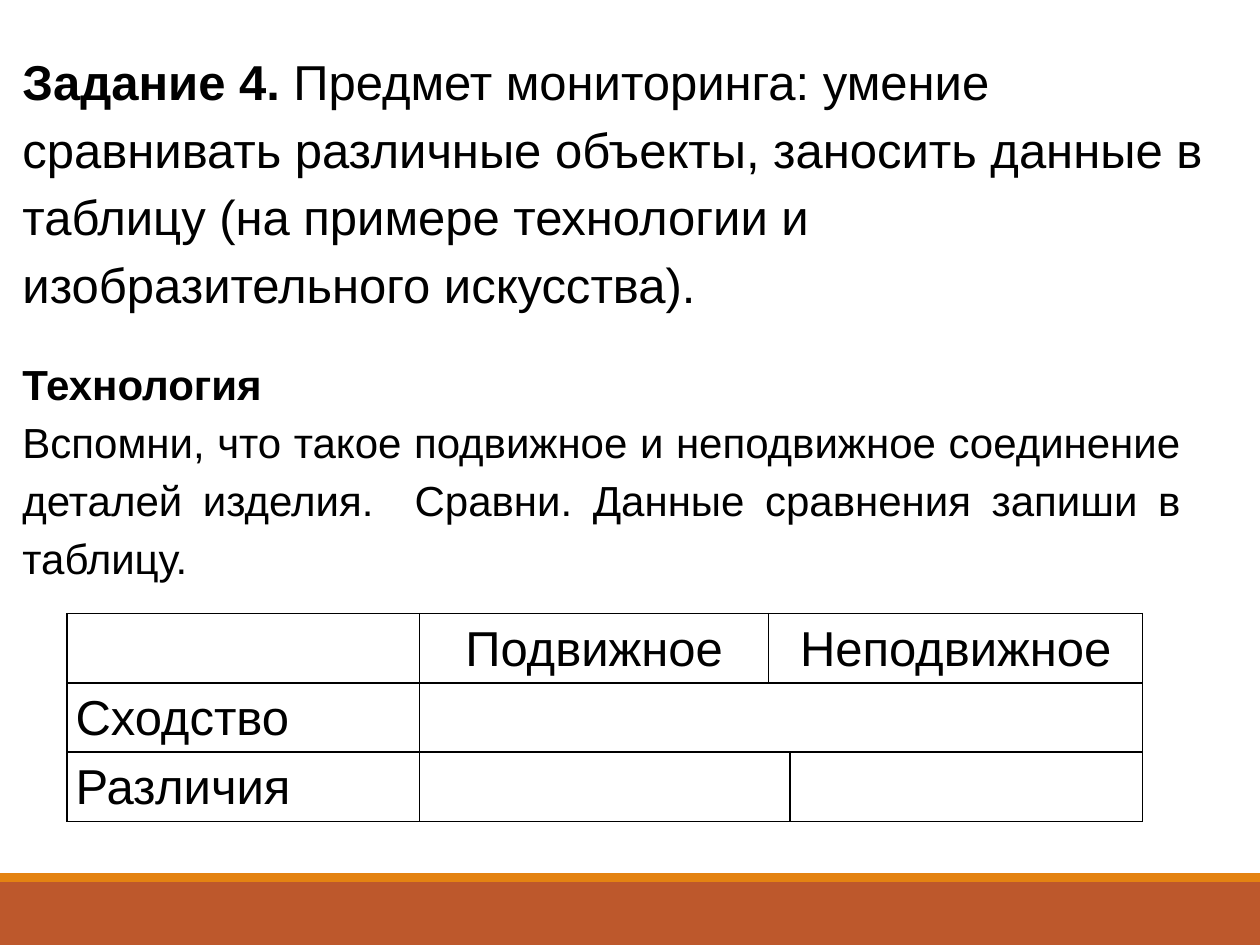
import pptx
import pptx.dml.color
import pptx.enum.shapes
import pptx.enum.text
import pptx.oxml
import pptx.oxml.ns
import pptx.util

WIDTH, HEIGHT = 10, 7.5
INK = "000000"
ALIGN = pptx.enum.text.PP_ALIGN
inches = pptx.util.Inches


def color(hex_value):
    return pptx.dml.color.RGBColor.from_string(hex_value)


def add_band(slide, top, height, fill):
    band = slide.shapes.add_shape(
        pptx.enum.shapes.MSO_SHAPE.RECTANGLE,
        0, inches(top), inches(WIDTH), inches(height))
    band.shadow.inherit = False
    band.fill.solid()
    band.fill.fore_color.rgb = color(fill)
    band.line.fill.background()


def write_paragraph(paragraph, runs, size, align):
    paragraph.alignment = align
    paragraph.line_spacing = 1.15
    for wording, bold in runs:
        run = paragraph.add_run()
        run.text = wording
        run.font.name = "Arial"
        run.font.size = pptx.util.Pt(size)
        run.font.bold = bold
        run.font.color.rgb = color(INK)


def add_text(slide, box, paragraphs, size, align):
    frame = slide.shapes.add_textbox(*map(inches, box)).text_frame
    frame.word_wrap = True
    frame.auto_size = pptx.enum.text.MSO_AUTO_SIZE.SHAPE_TO_FIT_TEXT
    for index, runs in enumerate(paragraphs):
        paragraph = frame.add_paragraph() if index else frame.paragraphs[0]
        write_paragraph(paragraph, runs, size, align)


def style_cell(cell):
    cell.margin_left = cell.margin_right = inches(0.07)
    cell.margin_top = cell.margin_bottom = 0
    properties = cell._tc.get_or_add_tcPr()
    for side in ("lnL", "lnR", "lnT", "lnB"):
        properties.append(pptx.oxml.parse_xml(
            f'<a:{side} {pptx.oxml.ns.nsdecls("a")} w="12700"><a:solidFill>'
            f'<a:srgbClr val="{INK}"/></a:solidFill></a:{side}>'))
    cell.fill.background()


def add_comparison(slide, left, top, columns, row_height, labels, merges):
    rows = 3
    table = slide.shapes.add_table(
        rows, len(columns), inches(left), inches(top),
        inches(sum(columns)), inches(rows * row_height)).table
    table.first_row = table.horz_banding = False
    for column, width in zip(table.columns, columns):
        column.width = inches(width)
    for row in table.rows:
        row.height = inches(row_height)
    for cell in table.iter_cells():
        style_cell(cell)
    for row, first, last in merges:
        table.cell(row, first).merge(table.cell(row, last))
    for (row, column), (wording, align) in labels.items():
        paragraph = table.cell(row, column).text_frame.paragraphs[0]
        write_paragraph(paragraph, [(wording, False)], 28, align)


def main():
    deck = pptx.Presentation()
    deck.slide_width, deck.slide_height = inches(WIDTH), inches(HEIGHT)
    slide = deck.slides.add_slide(deck.slide_layouts[6])

    add_band(slide, 7, 0.5, "BD582C")
    add_band(slide, 6.93, 0.07, "E48312")

    task = [[
        ("Задание 4. ", True),
        ("Предмет мониторинга: умение сравнивать различные объекты, "
         "заносить данные в таблицу (на примере технологии и "
         "изобразительного искусства).", False)]]
    add_text(slide, (0.08, 0.29, 9.68, 2.27), task, 28, ALIGN.LEFT)

    technology = [
        [("Технология", True)],
        [("Вспомни, что такое подвижное и неподвижное соединение деталей "
          "изделия.  Сравни. Данные сравнения запиши в таблицу.", False)]]
    add_text(slide, (0.08, 2.74, 9.39, 1.96), technology, 24, ALIGN.JUSTIFY)

    labels = {
        (0, 1): ("Подвижное", ALIGN.CENTER),
        (0, 2): ("Неподвижное", ALIGN.CENTER),
        (1, 0): ("Сходство", ALIGN.JUSTIFY),
        (2, 0): ("Различия", ALIGN.JUSTIFY),
    }
    merges = [(0, 2, 3), (1, 1, 3), (2, 1, 2)]
    add_comparison(slide, 0.53, 4.87, (2.8, 2.77, 0.17, 2.8), 0.55,
                   labels, merges)

    deck.save("out.pptx")


if __name__ == "__main__":
    main()
